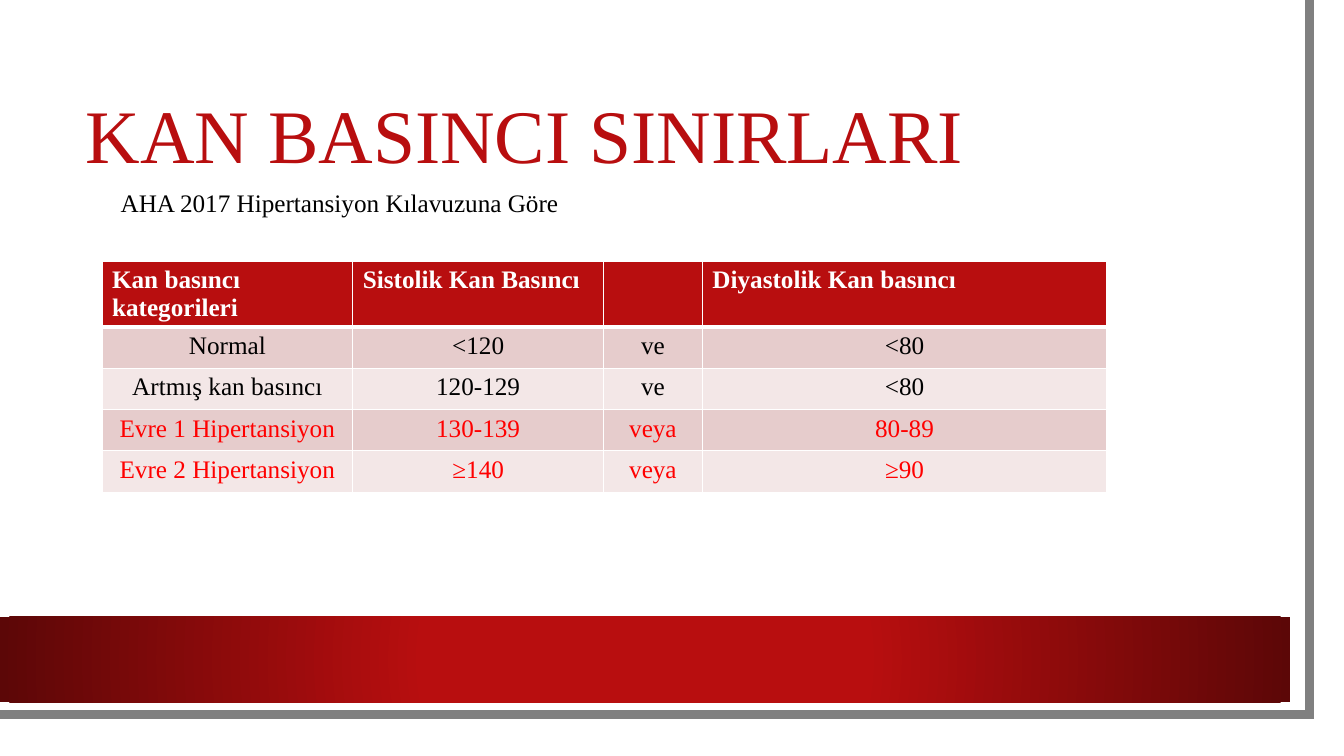
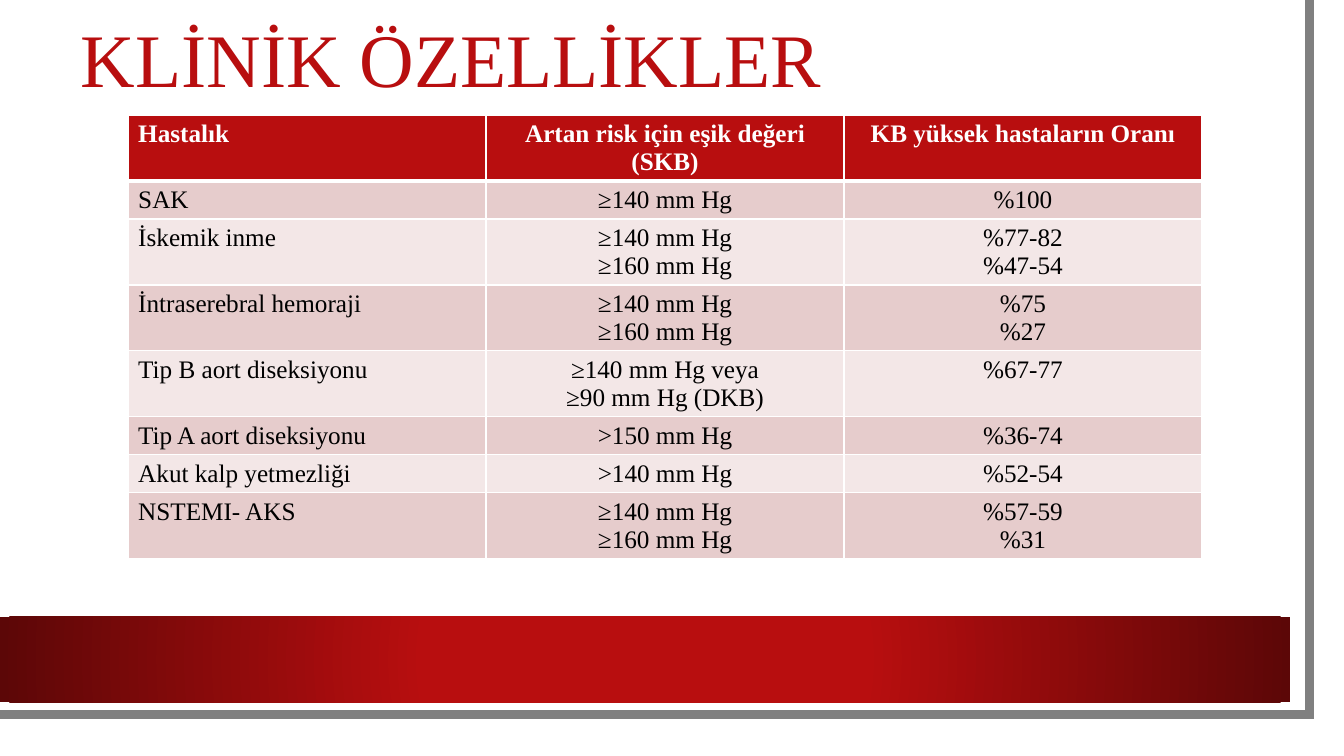
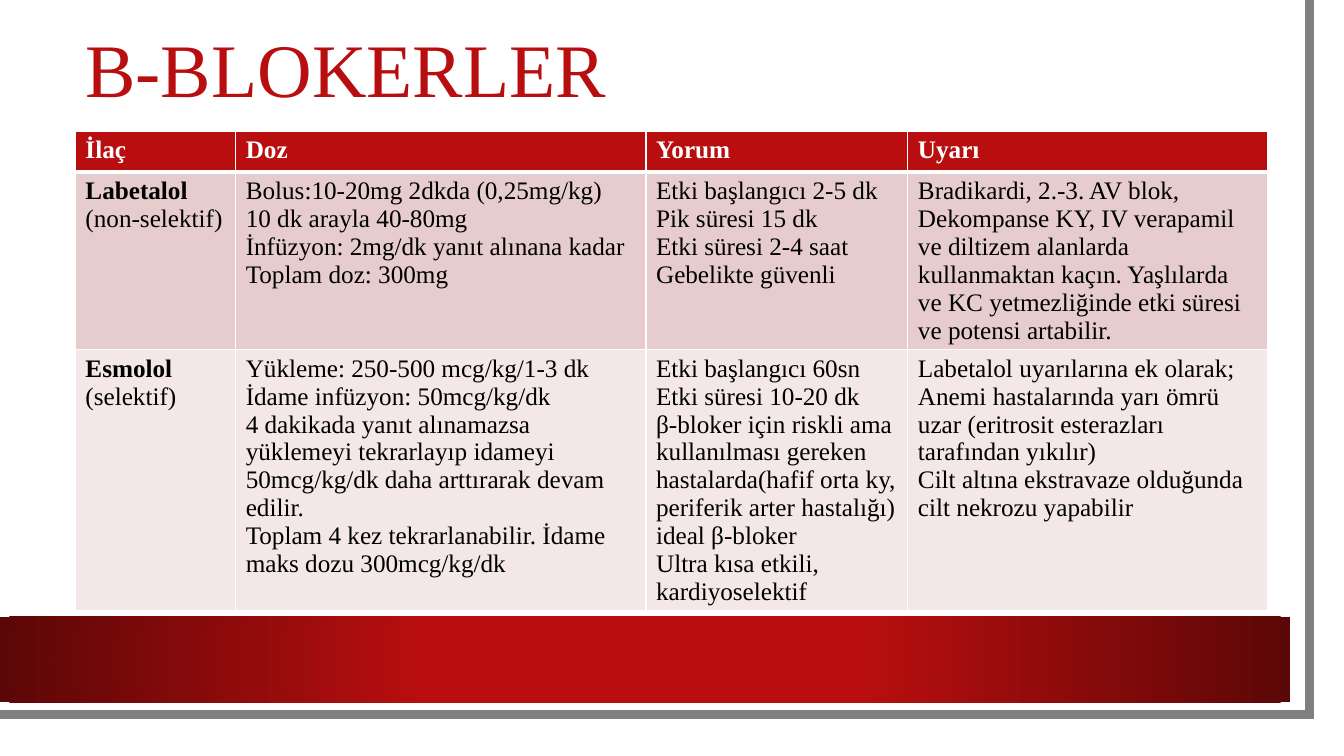
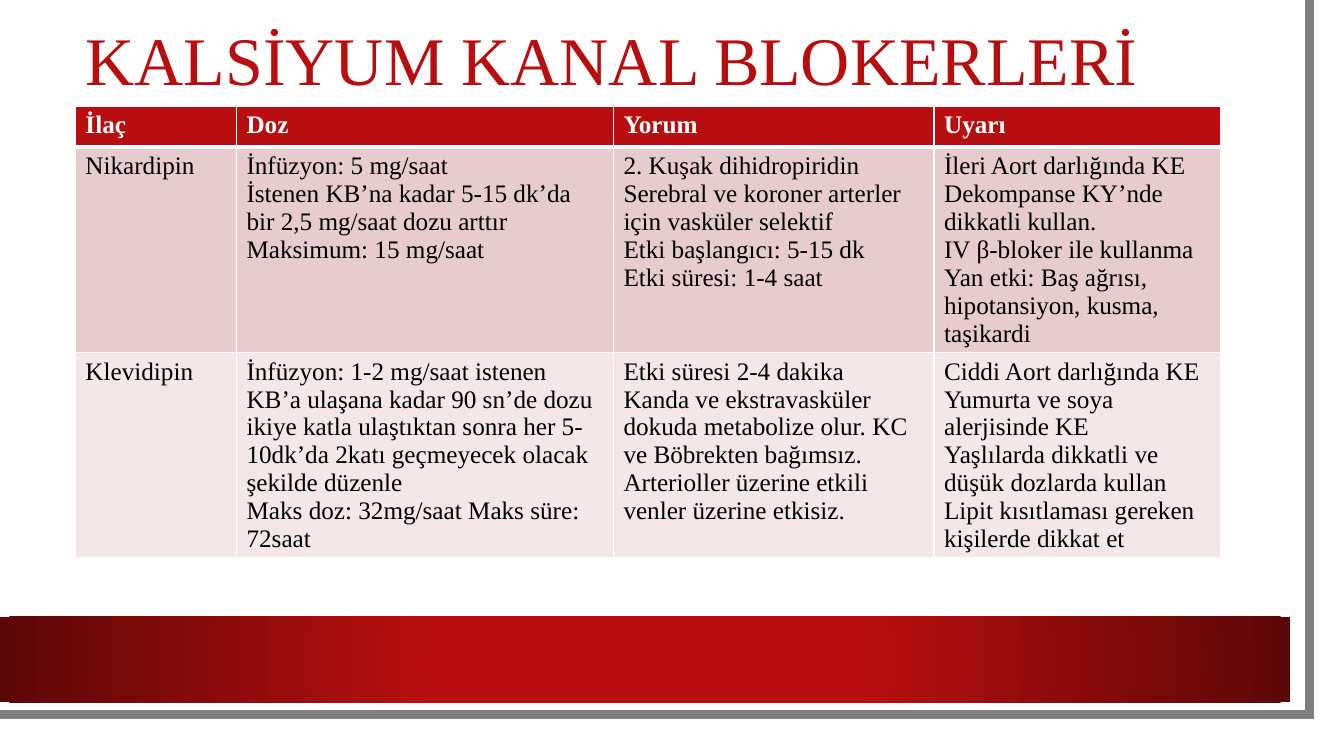
from lxml import etree
from pptx import Presentation
from pptx.dml.color import RGBColor
from pptx.enum import shapes, text
from pptx.oxml import parse_xml
from pptx.oxml.ns import nsdecls, qn
from pptx.util import Cm, Pt

RED = RGBColor(0xB8, 0x0E, 0x0F)
DARK_RED = RGBColor(0x5C, 0x07, 0x07)
ALERT = RGBColor(0xFF, 0x00, 0x00)
GREY = RGBColor(0x80, 0x80, 0x80)
PINK = RGBColor(0xE6, 0xCC, 0xCC)
PALE_PINK = RGBColor(0xF3, 0xE7, 0xE7)
WHITE = RGBColor(0xFF, 0xFF, 0xFF)
BLACK = RGBColor(0x00, 0x00, 0x00)
FONT = "Times New Roman"
LEFT, CENTER = text.PP_ALIGN.LEFT, text.PP_ALIGN.CENTER


def set_font(paragraph, size, color, bold=False):
    font = paragraph.font
    font.name, font.size, font.bold = FONT, Pt(size), bold
    font.color.rgb = color


def set_borders(cell, top, bottom):
    """Draw white cell borders; widths in points, the sides are always 1."""
    properties = cell._tc.get_or_add_tcPr()
    for place, (side, width) in enumerate(
            [("lnL", 1), ("lnR", 1), ("lnT", top), ("lnB", bottom)]):
        properties.insert(place, parse_xml(
            f'<a:{side} {nsdecls("a")} w="{Pt(width)}"><a:solidFill>'
            f'<a:srgbClr val="{WHITE}"/></a:solidFill></a:{side}>'))


# Each slide: title, its size and place, then the table's place, column widths,
# row heights, centred columns of header and body, and rows (all in cm).
PAGES = [
    dict(
        title="KAN BASINCI SINIRLARI", size=54, title_at=(1.9, 1.9),
        table_at=(2.57, 6.58), widths=[6.32, 6.32, 2.49, 10.19],
        heights=[1.6] + [1.04] * 4,
        centred_head=[], centred_body=[0, 1, 2, 3],
        rows=[
            ["Kan basıncı kategorileri", "Sistolik Kan Basıncı", "", "Diyastolik Kan basıncı"],
            ["Normal", "<120", "ve", "<80"],
            ["Artmış kan basıncı", "120-129", "ve", "<80"],
            ["Evre 1 Hipertansiyon", "130-139", "veya", "80-89"],
            ["Evre 2 Hipertansiyon", "≥140", "veya", "≥90"],
        ],
        alert_rows=[3, 4],
        subtitle="AHA 2017 Hipertansiyon Kılavuzuna Göre",
    ),
    dict(
        title="KLİNİK ÖZELLİKLER", size=54, title_at=(1.78, 0),
        table_at=(3.23, 2.9), widths=[9.02] * 3,
        heights=[1.52, 0.86, 1.52, 1.52, 1.52, 0.86, 0.86, 1.52],
        centred_head=[1, 2], centred_body=[1, 2],
        rows=[
            ["Hastalık", "Artan risk için eşik değeri (SKB)", "KB yüksek hastaların Oranı"],
            ["SAK", "≥140 mm Hg", "%100"],
            ["İskemik inme", "≥140 mm Hg\n≥160 mm Hg", "%77-82\n%47-54"],
            ["İntraserebral hemoraji", "≥140 mm Hg\n≥160 mm Hg", "%75\n%27"],
            ["Tip B aort diseksiyonu", "≥140 mm Hg veya\n≥90 mm Hg (DKB)", "%67-77"],
            ["Tip A aort diseksiyonu", ">150 mm Hg", "%36-74"],
            ["Akut kalp yetmezliği", ">140 mm Hg", "%52-54"],
            ["NSTEMI- AKS", "≥140 mm Hg\n≥160 mm Hg", "%57-59\n%31"],
        ],
    ),
    dict(
        title="Β-BLOKERLER", size=54, title_at=(1.9, 0.25),
        table_at=(1.9, 3.3), widths=[4.04, 10.34, 6.6, 9.07],
        heights=[1.04, 4.4, 6.5],
        centred_head=[], centred_body=[],
        rows=[
            ["İlaç", "Doz", "Yorum", "Uyarı"],
            ["Labetalol\n(non-selektif)",
             "Bolus:10-20mg 2dkda (0,25mg/kg)\n10 dk arayla 40-80mg\n"
             "İnfüzyon: 2mg/dk yanıt alınana kadar\nToplam doz: 300mg",
             "Etki başlangıcı 2-5 dk\nPik süresi 15 dk\n"
             "Etki süresi 2-4 saat\nGebelikte güvenli",
             "Bradikardi, 2.-3. AV blok,\n"
             "Dekompanse KY, IV verapamil ve diltizem alanlarda kullanmaktan kaçın. "
             "Yaşlılarda ve KC yetmezliğinde etki süresi ve potensi artabilir."],
            ["Esmolol\n(selektif)",
             "Yükleme: 250-500 mcg/kg/1-3 dk\nİdame infüzyon: 50mcg/kg/dk\n"
             "4 dakikada yanıt alınamazsa yüklemeyi tekrarlayıp idameyi "
             "50mcg/kg/dk daha arttırarak devam edilir.\n"
             "Toplam 4 kez tekrarlanabilir. İdame maks dozu 300mcg/kg/dk",
             "Etki başlangıcı 60sn\nEtki süresi 10-20 dk\n"
             "β-bloker için riskli ama kullanılması gereken hastalarda(hafif orta ky, "
             "periferik arter hastalığı) ideal β-bloker\n"
             "Ultra kısa etkili, kardiyoselektif",
             "Labetalol uyarılarına ek olarak;\n"
             "Anemi hastalarında yarı ömrü uzar (eritrosit esterazları tarafından yıkılır)\n"
             "Cilt altına ekstravaze olduğunda cilt nekrozu yapabilir"],
        ],
        bold_names=True,
    ),
    dict(
        title="KALSİYUM KANAL BLOKERLERİ", size=48.6, title_at=(1.9, 0),
        table_at=(1.9, 2.67), widths=[4.06, 9.5, 8.08, 7.21],
        heights=[1.04, 5.15, 5.15],
        centred_head=[], centred_body=[],
        rows=[
            ["İlaç", "Doz", "Yorum", "Uyarı"],
            ["Nikardipin",
             "İnfüzyon: 5 mg/saat\n"
             "İstenen KB’na kadar 5-15 dk’da bir 2,5 mg/saat dozu arttır\n"
             "Maksimum: 15 mg/saat",
             "2. Kuşak dihidropiridin\n"
             "Serebral ve koroner arterler için vasküler selektif\n"
             "Etki başlangıcı: 5-15 dk\nEtki süresi: 1-4 saat",
             "İleri Aort darlığında KE\nDekompanse KY’nde dikkatli kullan.\n"
             "IV β-bloker ile kullanma\n"
             "Yan etki: Baş ağrısı, hipotansiyon, kusma, taşikardi"],
            ["Klevidipin",
             "İnfüzyon: 1-2 mg/saat istenen KB’a ulaşana kadar 90 sn’de dozu ikiye katla "
             "ulaştıktan sonra her 5-10dk’da 2katı geçmeyecek olacak şekilde düzenle\n"
             "Maks doz: 32mg/saat Maks süre: 72saat",
             "Etki süresi 2-4 dakika\n"
             "Kanda ve ekstravasküler dokuda metabolize olur. KC ve Böbrekten bağımsız. "
             "Arterioller üzerine etkili venler üzerine etkisiz.",
             "Ciddi Aort darlığında KE\nYumurta ve soya alerjisinde KE\n"
             "Yaşlılarda dikkatli ve düşük dozlarda kullan\n"
             "Lipit kısıtlaması gereken kişilerde dikkat et"],
        ],
    ),
]

prs = Presentation()
prs.slide_width, prs.slide_height = Cm(33.87), Cm(19.05)
layout = prs.slide_layouts[5]

for number, page in enumerate(PAGES):
    slide = prs.slides.add_slide(layout)

    # The page edge and red band are built once and moved to the layout.
    if number == 0:
        outline = slide.shapes.build_freeform(32.56, 0, scale=Cm(1))
        outline.add_line_segments([(32.64, 17.83), (-0.08, 17.81)], close=False)
        edge = outline.convert_to_shape()
        edge.shadow.inherit = False
        edge.fill.background()
        edge.line.color.rgb = GREY
        edge.line.width = Pt(6.5)
        etree.SubElement(edge.line._ln, qn("a:miter"), lim="800000")

        band = slide.shapes.add_shape(
            shapes.MSO_SHAPE.RECTANGLE, 0, Cm(15.54), Cm(32.51), Cm(2.16))
        band.shadow.inherit = False
        band.line.fill.background()
        band.element.spPr.find(qn("a:prstGeom")).addnext(parse_xml(
            f'<a:gradFill {nsdecls("a")}><a:gsLst>'
            f'<a:gs pos="34000"><a:srgbClr val="{RED}"/></a:gs>'
            f'<a:gs pos="100000"><a:srgbClr val="{DARK_RED}"/></a:gs></a:gsLst>'
            '<a:path path="circle"><a:fillToRect l="50000" t="50000" r="50000" b="50000"/>'
            '</a:path></a:gradFill>'))
        for part in (edge, band):
            layout.shapes.element.append(part.element)

    title = slide.shapes.title
    title.left, title.top = map(Cm, page["title_at"])
    title.width, title.height = Cm(28.88), Cm(3.2)
    title.text_frame.text = page["title"]
    title.text_frame.vertical_anchor = text.MSO_ANCHOR.MIDDLE
    title.text_frame.auto_size = text.MSO_AUTO_SIZE.NONE
    heading = title.text_frame.paragraphs[0]
    heading.alignment = LEFT
    heading.line_spacing = 0.9
    set_font(heading, page["size"], RED)

    rows, widths, heights = page["rows"], page["widths"], page["heights"]
    left, top = map(Cm, page["table_at"])
    table = slide.shapes.add_table(
        len(rows), len(widths), left, top, Cm(sum(widths)), Cm(sum(heights))).table
    for column, width in zip(table.columns, widths):
        column.width = Cm(width)
    for r, (row, height) in enumerate(zip(rows, heights)):
        table.rows[r].height = Cm(height)
        header = r == 0
        centred = page["centred_head" if header else "centred_body"]
        ink = WHITE if header else ALERT if r in page.get("alert_rows", []) else BLACK
        for c, content in enumerate(row):
            cell = table.cell(r, c)
            cell.text = content
            cell.fill.solid()
            cell.fill.fore_color.rgb = RED if header else PINK if r % 2 else PALE_PINK
            set_borders(cell, top=3 if r == 1 else 1, bottom=3 if header else 1)
            for p, paragraph in enumerate(cell.text_frame.paragraphs):
                paragraph.alignment = CENTER if c in centred else LEFT
                drug_name = page.get("bold_names", False) and c == 0 and p == 0
                set_font(paragraph, 18, ink, bold=header or drug_name)

    if "subtitle" in page:
        guideline = slide.shapes.add_textbox(Cm(2.79), Cm(4.6), Cm(17.3), Cm(1.02)).text_frame
        guideline.word_wrap = True
        guideline.text = page["subtitle"]
        set_font(guideline.paragraphs[0], 18, BLACK)

prs.save("out.pptx")
